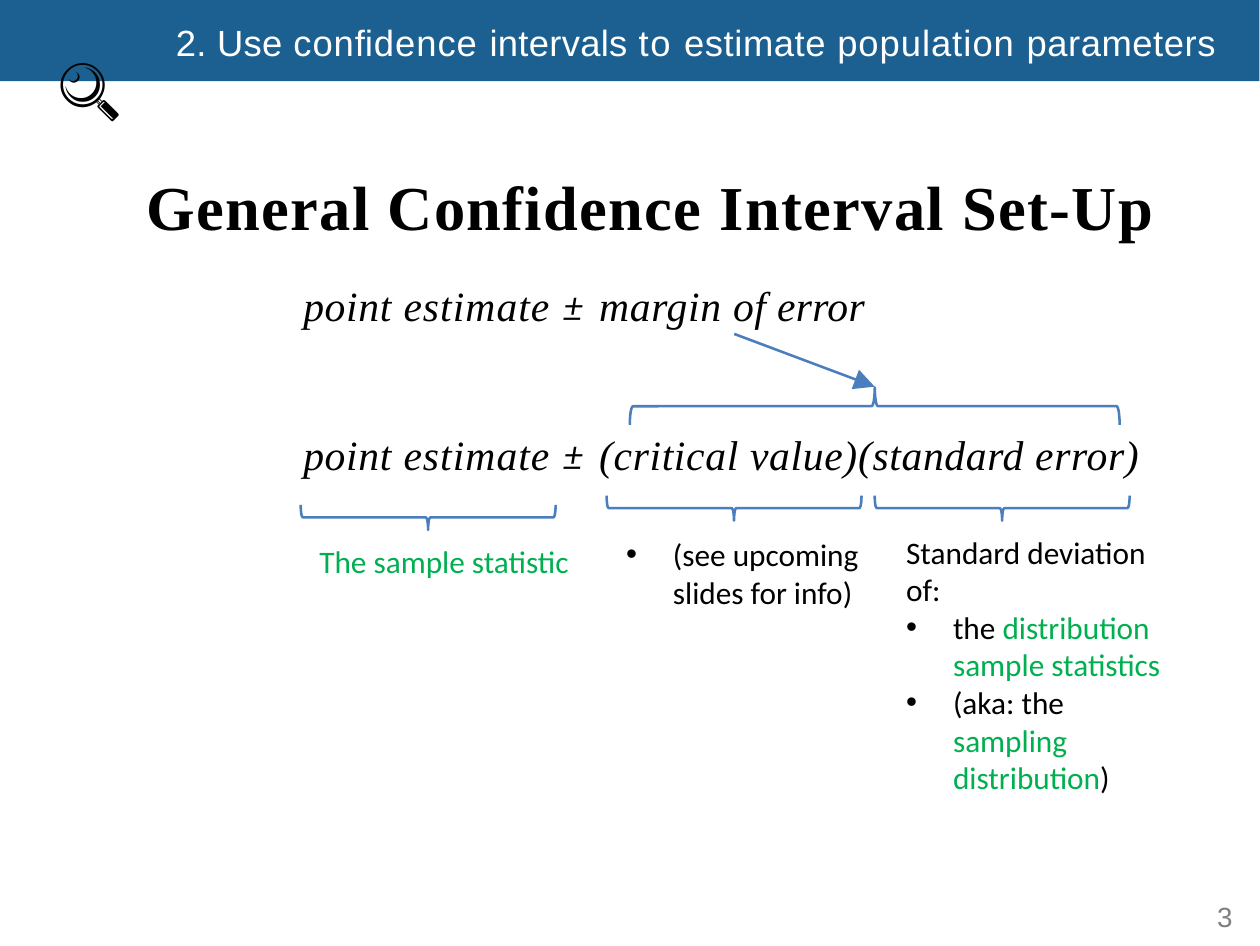
import pptx
import pptx.util
import pptx.dml.color
import pptx.enum.shapes
import pptx.enum.text
import lxml.etree
import pptx.oxml.ns

RGB = pptx.dml.color.RGBColor
BLUE = RGB(0x1B, 0x60, 0x90)
LINE = RGB(0x4B, 0x7E, 0xBC)
GREEN = RGB(0x00, 0xB0, 0x50)
GRAY = RGB(0x7F, 0x7F, 0x7F)
BLACK = RGB(0, 0, 0)
WHITE = RGB(255, 255, 255)
SERIF, SANS, BODY = "Times New Roman", "Arial", "Calibri"

# Slide size, and a grid of 504 columns by 378 rows
WIDE, HIGH = pptx.util.Pt(363), pptx.util.Pt(272.5)
COLS = 504
UNIT = pptx.util.Inches(0.01)
TIGHT, ROOMY = (0, 1), (10, 5)  # side and top insets

# Content: a run is (text, letter spacing, own colour, own font)
HEAD = [("General Confidence Interval Set-Up", 0.4)]
BANNER = [("2. Use ", 0.1), ("conﬁdence ", 0.3), ("intervals ", 0.1),
          ("to ", 0.5), ("estimate ", 0.2), ("population ", 0.3),
          ("parameters", 0.2)]
START = [("point ", 0.2), ("estimate ", 0.3), ("± ", 0.9, None, "Cambria")]
MARGIN = START + [("margin ", 0.2), ("of error", 0.1)]
PARTS = START + [("(critical value)(standard error)", 0.2)]

# Text boxes: place, insets, wrap, style (font, size, colour, italic, space
# before, indent), paragraphs as (bullet, runs)
FORM = (SERIF, 12, BLACK, True, 0.9, 1.4)
NOTE = (BODY, 9, BLACK, False, 0, 0)
BOXES = [
    ((69, 6, 424, 21), (0, 2), True, (SANS, 10.5, WHITE, False, 1.4, 1.4),
     [(False, BANNER)]),
    ((120, 111, 263, 22), TIGHT, True, FORM, [(False, MARGIN)]),
    ((120, 170.4, 373, 22), TIGHT, True, FORM, [(False, PARTS)]),
    ((486, 359, 9, 16), TIGHT, True, (SANS, 8, GRAY, False, 0.9, 1),
     [(False, [("3", -0.1)])]),
    ((13.6, 14.4, 45, 40), ROOMY, False, (BODY, 18, BLACK, False, 0, 0),
     [(False, [("🔍", 0)])]),
    ((118, 212, 124, 25), ROOMY, True, NOTE,
     [(False, [("The sample statistic", 0, GREEN)])]),
    ((240.7, 209.2, 124, 40), ROOMY, True, NOTE,
     [(True, [("(see upcoming slides for info)", 0)])]),
    ((352.8, 208.3, 124, 116), ROOMY, True, NOTE,
     [(False, [("Standard deviation of:", 0)]),
      (True, [("the ", 0), ("distribution sample statistics", 0, GREEN)]),
      (True, [("(aka: the ", 0), ("sampling distribution", 0, GREEN),
              (")", 0)])]),
]

# Braces: left, top, span, depth, turn
BRACES = [(252, 155, 196, 15, 90), (350, 198.3, 102, 10, 270),
          (242.7, 198.3, 102, 10, 270), (120.3, 202, 102, 10, 270)]
ARROW = (293.8, 133.6, 350, 154.7)


def scale(*vals):
    return [round(v * UNIT) for v in vals]


def add_sub(parent, tag, **attrs):
    return lxml.etree.SubElement(parent, pptx.oxml.ns.qn(tag), attrs)


def put_text(shape, inset, wrap, style, paras, bold=False):
    face, size, color, slant, space, dent = style
    frame = shape.text_frame
    frame.word_wrap = wrap
    frame.auto_size = pptx.enum.text.MSO_AUTO_SIZE.NONE
    frame.vertical_anchor = pptx.enum.text.MSO_ANCHOR.TOP
    side, top = scale(*inset)
    frame.margin_left = frame.margin_right = side
    frame.margin_top = top
    frame.margin_bottom = top if side else 0
    for num, (bullet, runs) in enumerate(paras):
        para = frame.add_paragraph() if num else frame.paragraphs[0]
        para.alignment = pptx.enum.text.PP_ALIGN.LEFT
        para.space_before = pptx.util.Pt(space)
        props = para._p.get_or_add_pPr()
        left, = scale(18.75 if bullet else dent)
        props.set("marL", str(left))
        props.set("indent", str(-left if bullet else 0))
        if bullet:
            add_sub(props, "a:buFont", typeface=SANS)
            add_sub(props, "a:buChar", char="•")
        font = para.font
        font.name, font.size = face, pptx.util.Pt(size)
        font.bold, font.italic = bold, slant
        font.color.rgb = color
        for text, gap, *own in runs:
            run = para.add_run()
            run.text = text
            if gap:
                run._r.get_or_add_rPr().set("spc", str(round(gap * 100)))
            if own and own[0] is not None:
                run.font.color.rgb = own[0]
            if len(own) > 1:
                run.font.name = own[1]


def main():
    deck = pptx.Presentation()
    deck.slide_width = WIDE
    deck.slide_height = HIGH
    slide = deck.slides.add_slide(deck.slide_layouts[5])
    shapes = slide.shapes
    kinds = pptx.enum.shapes.MSO_SHAPE

    # Banner bar
    bar = shapes.add_shape(kinds.RECTANGLE, *scale(0, 0, COLS, 32.5))
    bar.shadow.inherit = False
    bar.fill.solid()
    bar.fill.fore_color.rgb = BLUE
    bar.line.fill.background()

    # Title
    title = shapes.title
    title.left, title.top, title.width, title.height = scale(
        48.7, 62.4, 428, 40)
    put_text(title, ROOMY, False, (SERIF, 18, BLACK, False, 0, 0),
             [(False, HEAD)], bold=True)

    # Banner text, formulas and notes
    for place, *rest in BOXES:
        put_text(shapes.add_textbox(*scale(*place)), *rest)

    # Braces, turned about their centres
    for left, top, span, depth, turn in BRACES:
        shift = (span - depth) / 2
        brace = shapes.add_shape(kinds.LEFT_BRACE, *scale(
            left + shift, top - shift, depth, span))
        brace.rotation = turn
        brace.shadow.inherit = False
        brace.fill.background()
        brace.line.color.rgb = LINE
        brace.line.width = pptx.util.Pt(0.75)

    # Arrow from margin of error to its parts
    arrow = shapes.add_connector(
        pptx.enum.shapes.MSO_CONNECTOR.STRAIGHT, *scale(*ARROW))
    arrow.line.color.rgb = LINE
    arrow.line.width = pptx.util.Pt(0.75)
    add_sub(arrow.line._get_or_add_ln(), "a:tailEnd", type="triangle")
    add_sub(arrow._element.spPr, "a:effectLst")

    deck.save("out.pptx")


if __name__ == "__main__":
    main()
